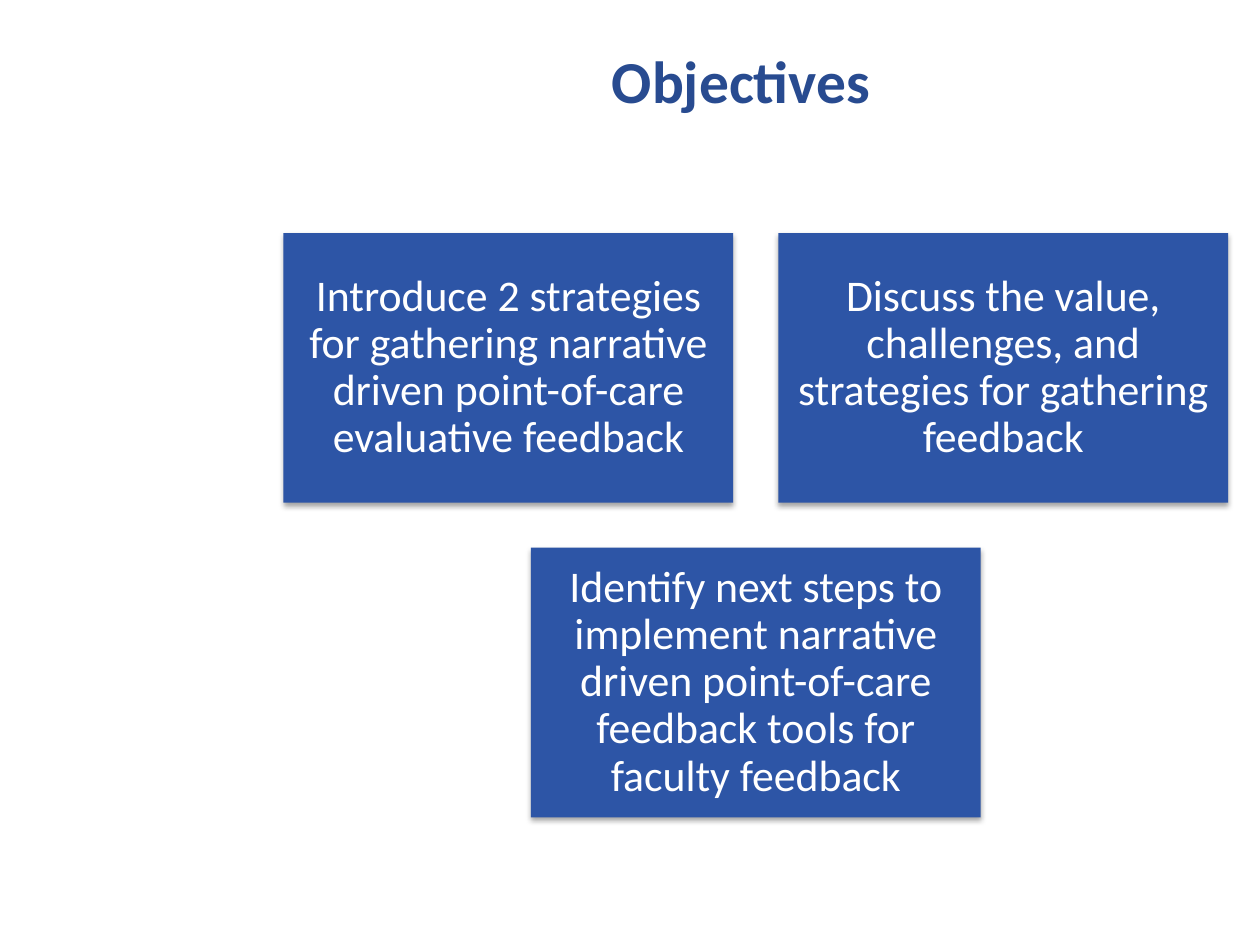
from lxml import etree
from pptx import Presentation
from pptx.dml.color import RGBColor
from pptx.enum.shapes import MSO_SHAPE
from pptx.enum.text import MSO_ANCHOR, PP_ALIGN
from pptx.oxml.ns import qn
from pptx.util import Inches, Pt

RECT = MSO_SHAPE.RECTANGLE
MIDDLE = MSO_ANCHOR.MIDDLE
CENTER = PP_ALIGN.CENTER
FONT = "Calibri"
COLORS = {"title": "284B90", "card": "2D55A6", "text": "FFFFFF", "shade": "000000"}

# Card grid, in inches: the gap is a tenth of a card's width
LEFT, TOP = 2.25, 1.85
WIDE, HIGH = 3.57, 2.14
GAP = WIDE / 10


def write(shape, text, size, color, bold=False):
    frame = shape.text_frame
    frame.word_wrap = True
    frame.vertical_anchor = MIDDLE
    para = frame.paragraphs[0]
    para.alignment = CENTER
    run = para.add_run()
    run.text = text
    run.font.name = FONT
    run.font.size = Pt(size)
    run.font.bold = bold
    run.font.color.rgb = RGBColor.from_string(COLORS[color])
    return frame


def shade(shape):
    effects = etree.SubElement(shape._element.spPr, qn("a:effectLst"))
    outer = etree.SubElement(effects, qn("a:outerShdw"), blurRad=str(Pt(3.1)),
                             dist=str(Pt(1.8)), dir="5400000", rotWithShape="0")
    tint = etree.SubElement(outer, qn("a:srgbClr"), val=COLORS["shade"])
    etree.SubElement(tint, qn("a:alpha"), val="35000")


deck = Presentation()
deck.slide_width, deck.slide_height = Inches(10), Inches(7.5)
slide = deck.slides.add_slide(deck.slide_layouts[6])

# Title
title = slide.shapes.add_textbox(Inches(2.17), Inches(0.17), Inches(7.42), Inches(0.92))
write(title, "Objectives", 34, "title", bold=True)

# Cards as column, row and text; the last is centred under the first two
cards = [
    (0, 0, "Introduce 2 strategies for gathering narrative driven "
           "point-of-care evaluative feedback"),
    (1, 0, "Discuss the value, challenges, and strategies for gathering feedback"),
    (0.5, 1, "Identify next steps to implement narrative driven "
             "point-of-care feedback tools for faculty feedback"),
]
for col, row, text in cards:
    card = slide.shapes.add_shape(
        RECT, Inches(LEFT + col * (WIDE + GAP)), Inches(TOP + row * (HIGH + GAP)),
        Inches(WIDE), Inches(HIGH))
    card.fill.solid()
    card.fill.fore_color.rgb = RGBColor.from_string(COLORS["card"])
    card.line.fill.background()
    shade(card)
    frame = write(card, text, 25, "text")
    frame.margin_left = frame.margin_right = Inches(0.1)
    frame.margin_top = frame.margin_bottom = Inches(0.1)
    frame.paragraphs[0].line_spacing = 0.9

deck.save("out.pptx")
